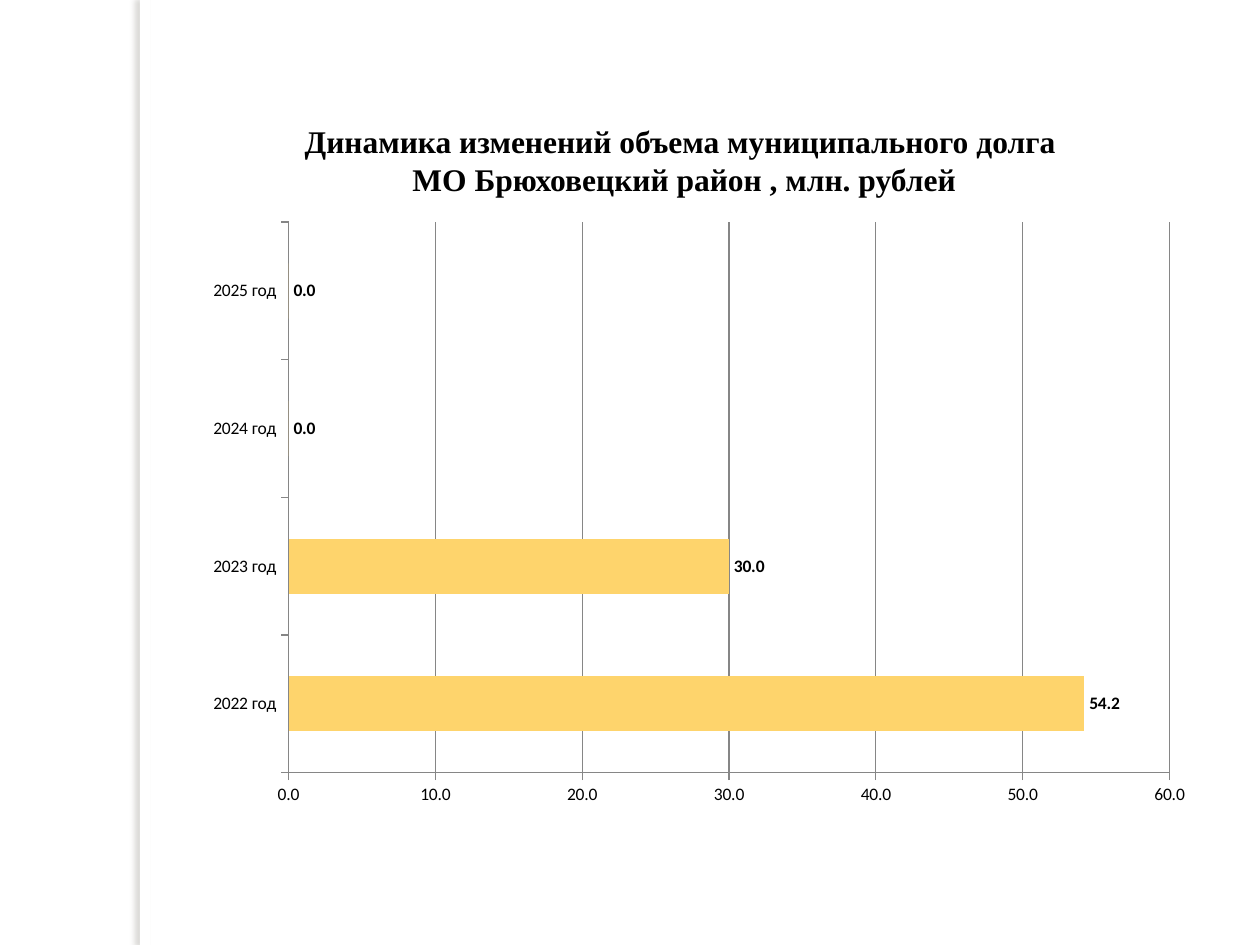
from lxml import etree
from pptx import Presentation
from pptx import util as u
from pptx.chart.data import CategoryChartData
from pptx.dml.color import RGBColor
from pptx.enum import chart as charts, shapes, text
from pptx.oxml import parse_xml
from pptx.oxml.ns import nsdecls, qn

# Content
TITLE = ["Динамика изменений объема муниципального долга ",
         "МО Брюховецкий район , млн. рублей"]
DEBT = {"2022 год": 54.2, "2023 год": 30, "2024 год": 0, "2025 год": 0}
NUMBER_FORMAT = "#,##0.0"

# Places in points: left, top, width, height
STRIP = (80, 0, 5.76, 540)
TITLE_AT = (127.44, 66.24, 527.04, 51.12)
CHART_AT = (105.12, 91.44, 586.08, 382.32)
PLOT = {"x": 0.102, "y": 0.093, "w": 0.859, "h": 0.823}  # shares of the chart

WHITE = RGBColor(0xFF, 0xFF, 0xFF)
BLACK = RGBColor(0, 0, 0)
GREY = RGBColor(0x86, 0x86, 0x86)
YELLOW = RGBColor(0xFE, 0xD4, 0x6C)


def points(place):
    return [u.Pt(value) for value in place]


def style_font(font, name, size, bold=False):
    font.name, font.size, font.bold = name, u.Pt(size), bold
    font.color.rgb = BLACK


def style_line(line):
    line.color.rgb = GREY
    line.width = u.Pt(0.75)


def add_strip(page):
    strip = page.shapes.add_shape(shapes.MSO_SHAPE.RECTANGLE, *points(STRIP))
    strip.fill.solid()
    strip.fill.fore_color.rgb = WHITE
    strip.line.fill.background()
    strip.shadow.inherit = False
    # Soft shadow to the left
    effects = strip.element.spPr.find(qn("a:effectLst"))
    effects.append(parse_xml(
        f'<a:outerShdw {nsdecls("a")} blurRad="{u.Pt(3)}" dist="{u.Pt(3)}" dir="10800000" '
        'algn="tl" rotWithShape="0"><a:srgbClr val="736F63"><a:alpha val="25000"/>'
        '</a:srgbClr></a:outerShdw>'))


def add_title(page):
    box = page.shapes.add_textbox(*points(TITLE_AT))
    box.text_frame.word_wrap = True
    box.text_frame.text = "\n".join(TITLE)
    for para in box.text_frame.paragraphs:
        para.alignment = text.PP_ALIGN.CENTER
        for span in para.runs:
            style_font(span.font, "Times New Roman", 18, bold=True)


def add_debt_chart(page):
    data = CategoryChartData(number_format=NUMBER_FORMAT)
    data.categories = list(DEBT)
    data.add_series("Series 1", list(DEBT.values()))
    chart = page.shapes.add_chart(
        charts.XL_CHART_TYPE.BAR_CLUSTERED, *points(CHART_AT), data).chart
    chart.has_legend = False
    chart.has_title = False
    style_font(chart.font, "Calibri", 10)

    # Axes
    for axis in (chart.category_axis, chart.value_axis):
        axis.major_tick_mark = charts.XL_TICK_MARK.OUTSIDE
        axis.minor_tick_mark = charts.XL_TICK_MARK.NONE
        style_line(axis.format.line)
    values = chart.value_axis
    values.minimum_scale, values.maximum_scale, values.major_unit = 0, 60, 10
    values.tick_labels.number_format = NUMBER_FORMAT
    values.tick_labels.number_format_is_linked = False
    values.has_major_gridlines = True
    style_line(values.major_gridlines.format.line)

    # Bars and their labels
    plot = chart.plots[0]
    plot.gap_width = 150
    plot.vary_by_categories = False
    bars = plot.series[0]
    bars.format.fill.solid()
    bars.format.fill.fore_color.rgb = YELLOW
    labels = bars.data_labels
    labels.show_value = True
    labels.number_format = NUMBER_FORMAT
    labels.number_format_is_linked = False
    labels.position = charts.XL_LABEL_POSITION.OUTSIDE_END
    style_font(labels.font, "Calibri", 10, bold=True)

    # Fixed inner plot area
    area = plot._element.getparent()
    for old in area.findall(qn("c:layout")):
        area.remove(old)
    layout = etree.Element(qn("c:layout"))
    manual = etree.SubElement(layout, qn("c:manualLayout"))
    settings = {"layoutTarget": "inner", "xMode": "edge", "yMode": "edge", **PLOT}
    for name, value in settings.items():
        etree.SubElement(manual, qn(f"c:{name}")).set("val", str(value))
    area.insert(0, layout)


def main():
    deck = Presentation()
    deck.slide_width, deck.slide_height = u.Pt(720), u.Pt(540)
    page = deck.slides.add_slide(deck.slide_layouts[6])
    page.background.fill.solid()
    page.background.fill.fore_color.rgb = WHITE
    add_strip(page)
    add_title(page)
    add_debt_chart(page)
    deck.save("out.pptx")


if __name__ == "__main__":
    main()
